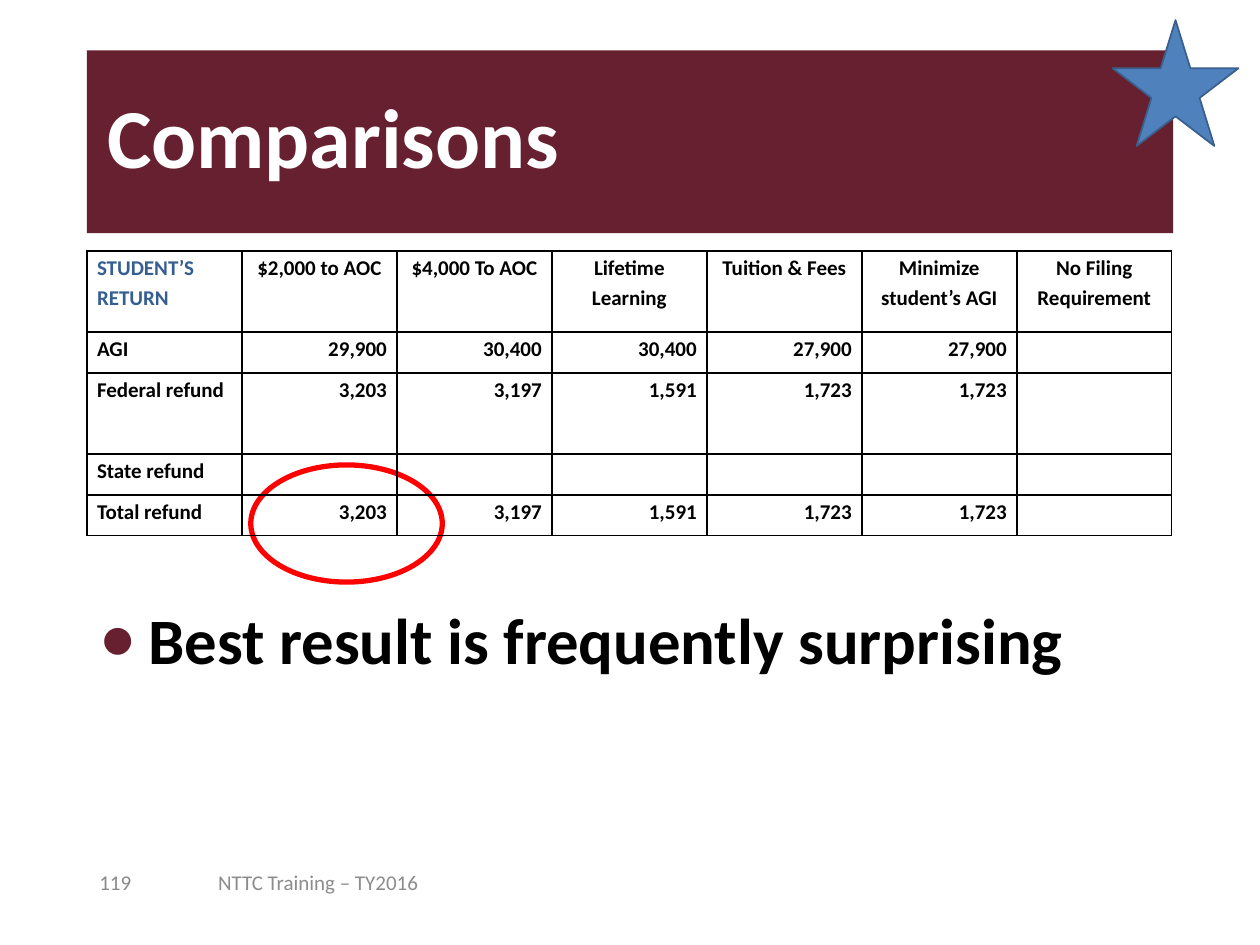
from collections import namedtuple

from lxml import etree
from pptx import Presentation
from pptx.dml.color import RGBColor
from pptx.enum.shapes import MSO_SHAPE
from pptx.enum.text import MSO_ANCHOR, MSO_AUTO_SIZE, PP_ALIGN
from pptx.oxml.ns import qn
from pptx.util import Emu, Inches, Pt

LEFT, CENTER, RIGHT = PP_ALIGN.LEFT, PP_ALIGN.CENTER, PP_ALIGN.RIGHT
TOP, MIDDLE = MSO_ANCHOR.TOP, MSO_ANCHOR.MIDDLE
OVAL, STAR = MSO_SHAPE.OVAL, MSO_SHAPE.STAR_5_POINT
NO_AUTOFIT = MSO_AUTO_SIZE.NONE

FONT = "Calibri"
COLORS = {
    "maroon": "67202F", "white": "FFFFFF", "black": "000000", "heading": "365F91",
    "star": "4F81BD", "star line": "3A5F8C", "ring": "FF0000",
    "footer": "8C8C8C", "number": "898989",
}
WIDTH, HEIGHT = Inches(10), Inches(7.5)
COLUMN, ROW = WIDTH / 100, HEIGHT / 75
Box = namedtuple("Box", "left top width height")

ROW_UNITS = [2, 1, 2, 1, 1]
RETURNS = [
    ["STUDENT’S RETURN", "$2,000 to AOC", "$4,000 To AOC", "Lifetime Learning",
     "Tuition & Fees", "Minimize student’s AGI", "No Filing Requirement"],
    ["AGI", "29,900", "30,400", "30,400", "27,900", "27,900", ""],
    ["Federal refund", "3,203", "3,197", "1,591", "1,723", "1,723", ""],
    ["State refund", "", "", "", "", "", ""],
    ["Total refund", "3,203", "3,197", "1,591", "1,723", "1,723", ""],
]


def grid_box(left, top, width, height):
    """Turn grid columns and rows into a box of lengths."""
    return Box(*(Emu(round(value * unit)) for value, unit in
                 zip((left, top, width, height), (COLUMN, ROW, COLUMN, ROW))))


def color(name):
    """Return the named colour."""
    return RGBColor.from_string(COLORS[name])


def apply_format(target, values):
    """Set attributes from a dict of format values."""
    for name, value in values.items():
        setattr(target, name, value)


def write_text(paragraph, text, size, color_name, bold=False):
    """Add one formatted run to a paragraph."""
    run = paragraph.add_run()
    run.text = text
    apply_format(run.font, {"name": FONT, "size": Pt(size), "bold": bold})
    run.font.color.rgb = color(color_name)


def add_title(slide, box, text):
    """Place the title on its maroon band."""
    title = slide.shapes.title
    apply_format(title, box._asdict())
    title.fill.solid()
    title.fill.fore_color.rgb = color("maroon")
    apply_format(title.text_frame, {"vertical_anchor": MIDDLE, "word_wrap": True,
                                    "auto_size": NO_AUTOFIT})
    paragraph = title.text_frame.paragraphs[0]
    apply_format(paragraph, {"alignment": LEFT, "line_spacing": 0.9})
    paragraph._p.get_or_add_pPr().set("marL", str(Inches(0.06)))
    write_text(paragraph, text, 48, "white", True)


def add_text(slide, box, text, size, color_name, bold=False, anchor=MIDDLE):
    """Add a wrapped text box and return its paragraph."""
    frame = slide.shapes.add_textbox(*box).text_frame
    apply_format(frame, {"word_wrap": True, "vertical_anchor": anchor})
    paragraph = frame.paragraphs[0]
    write_text(paragraph, text, size, color_name, bold)
    return paragraph


def add_bullet(slide, box, text):
    """Add the bulleted conclusion."""
    paragraph = add_text(slide, box, text, 37, "black", True, TOP)
    properties = paragraph._p.get_or_add_pPr()
    properties.set("marL", str(Inches(0.38)))
    properties.set("indent", str(-Inches(0.38)))
    bullet_color = etree.SubElement(properties, qn("a:buClr"))
    etree.SubElement(bullet_color, qn("a:srgbClr"), val=COLORS["maroon"])
    etree.SubElement(properties, qn("a:buSzPct"), val="90000")
    etree.SubElement(properties, qn("a:buFont"), typeface=FONT)
    etree.SubElement(properties, qn("a:buChar"), char="●")


def add_marker(slide, box, preset, line_name, line_width, fill_name=None):
    """Add an outlined shape, filled when a fill is named."""
    shape = slide.shapes.add_shape(preset, *box)
    shape.shadow.inherit = False
    if fill_name:
        shape.fill.solid()
        shape.fill.fore_color.rgb = color(fill_name)
    else:
        shape.fill.background()
    shape.line.color.rgb = color(line_name)
    shape.line.width = Pt(line_width)


def add_borders(cell):
    """Draw thin black lines around a cell."""
    properties = cell._tc.get_or_add_tcPr()
    for index, side in enumerate(("a:lnL", "a:lnR", "a:lnT", "a:lnB")):
        line = etree.Element(qn(side), w=str(Pt(1)))
        fill = etree.SubElement(line, qn("a:solidFill"))
        etree.SubElement(fill, qn("a:srgbClr"), val=COLORS["black"])
        properties.insert(index, line)


def fill_cell(cell, text, alignment, color_name):
    """Format a cell and write its text."""
    apply_format(cell, {"margin_left": Inches(0.08), "margin_right": Inches(0.08),
                        "margin_top": 0, "margin_bottom": 0, "vertical_anchor": TOP})
    cell.fill.background()
    add_borders(cell)
    if text:
        paragraph = cell.text_frame.paragraphs[0]
        apply_format(paragraph, {"alignment": alignment, "line_spacing": 1.18,
                                 "space_after": Pt(6)})
        write_text(paragraph, text, 12, color_name, True)


def add_returns_table(slide, box, rows):
    """Add the comparison of returns with equal columns."""
    table = slide.shapes.add_table(len(rows), len(rows[0]), *box).table
    apply_format(table, {"first_row": False, "horz_banding": False})
    for column in table.columns:
        column.width = Emu(box.width // len(rows[0]))
    for row_index, values in enumerate(rows):
        table.rows[row_index].height = Emu(
            box.height * ROW_UNITS[row_index] // sum(ROW_UNITS))
        for column_index, text in enumerate(values):
            alignment = LEFT if column_index == 0 else CENTER if row_index == 0 else RIGHT
            color_name = "heading" if row_index == column_index == 0 else "black"
            fill_cell(table.cell(row_index, column_index), text, alignment, color_name)


def add_footer(slide, box, number, text):
    """Place the slide number and the footer text in one strip."""
    number_width = Emu(round(box.width * 0.15))
    text_left = Emu(round(box.width * 0.2))
    number_box = box._replace(width=number_width)
    text_box = box._replace(left=box.left + text_left, width=box.width - text_left)
    add_text(slide, text_box, text, 12, "footer")
    add_text(slide, number_box, number, 12, "number")


def main():
    """Build and save the comparisons slide."""
    presentation = Presentation()
    apply_format(presentation, {"slide_width": WIDTH, "slide_height": HEIGHT})
    slide = presentation.slides.add_slide(presentation.slide_layouts[5])
    add_title(slide, grid_box(6.9, 4, 86.2, 14.5), "Comparisons")
    add_footer(slide, grid_box(6.9, 68, 47.1, 4), "119", "NTTC Training – TY2016")
    add_bullet(slide, grid_box(7, 47.1, 80.8, 12), "Best result is frequently surprising")
    add_marker(slide, grid_box(19.9, 36.9, 15.2, 9.3), OVAL, "ring", 3)
    add_marker(slide, grid_box(88.3, 1.6, 10, 10), STAR, "star line", 1, "star")
    add_returns_table(slide, grid_box(6.9, 19.9, 86.1, 22.6), RETURNS)
    presentation.save("out.pptx")


if __name__ == "__main__":
    main()
